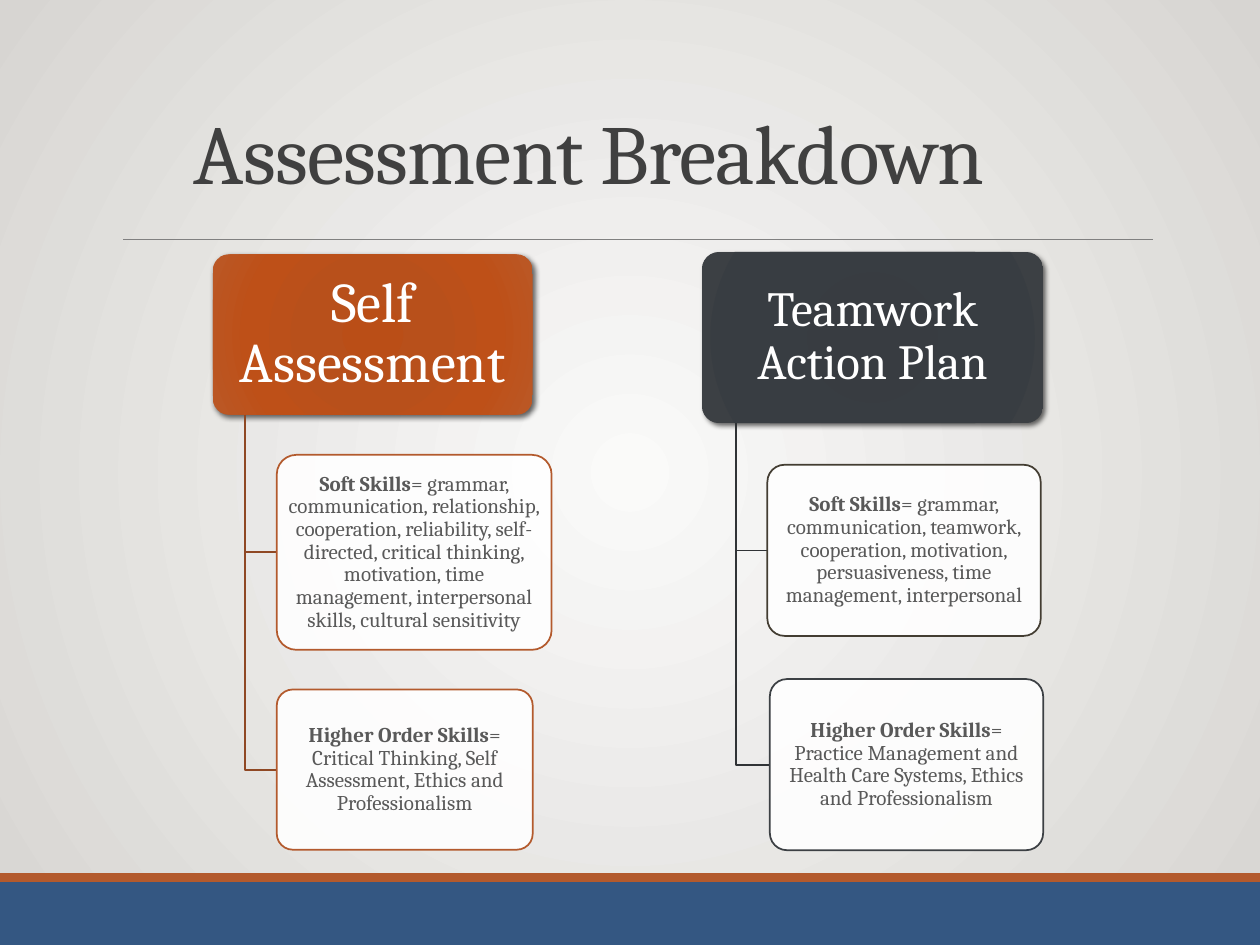
from lxml.etree import SubElement
from pptx import Presentation
from pptx.dml.color import RGBColor
from pptx.enum.shapes import MSO_CONNECTOR, MSO_SHAPE
from pptx.enum.text import MSO_ANCHOR, PP_ALIGN
from pptx.oxml.ns import qn
from pptx.util import Cm, Pt

WHITE = RGBColor(0xFF, 0xFF, 0xFF)
TITLE_GRAY = RGBColor(0x40, 0x40, 0x40)
BODY_GRAY = RGBColor(0x59, 0x59, 0x59)
RULE_GRAY = RGBColor(0x80, 0x80, 0x80)
BLUE = RGBColor(0x34, 0x57, 0x82)
ORANGE = RGBColor(0xB3, 0x5A, 0x2D)
BROWN = RGBColor(0x8F, 0x48, 0x24)
CHARCOAL = RGBColor(0x30, 0x33, 0x36)
OLIVE = RGBColor(0x43, 0x3D, 0x32)
SLATE = RGBColor(0x3C, 0x40, 0x44)

FONT = "Cambria"
TITLE = "Assessment Breakdown"
BACKGROUND_STOPS = [(0, "FAFAF9"), (100, "D7D5D2")]
BANDS = [(17.78, 1.27, BLUE), (17.6, 0.18, ORANGE)]
BRANCHES = [
    {
        "heading": "Self Assessment", "size": 32, "box": (4.29, 5.13, 6.45, 3.23),
        "margins": (0.18, 0.1), "connector": BROWN,
        "stops": [(0, "BA4E17"), (34, "B8501B"), (70, "BE5018"), (100, "BA5826")],
        "skills": [
            ("Soft Skills", "= grammar, communication, relationship, cooperation, "
             "reliability, self-directed, critical thinking, motivation, time "
             "management, interpersonal skills, cultural sensitivity",
             (5.58, 9.17, 5.54, 3.93), ORANGE),
            ("Higher Order Skills", "= Critical Thinking, Self Assessment, Ethics "
             "and Professionalism", (5.58, 13.9, 5.16, 3.23), ORANGE),
        ],
    },
    {
        "heading": "Teamwork Action Plan", "size": 28, "box": (14.15, 5.08, 6.88, 3.45),
        "margins": (0.15, 0.1), "connector": CHARCOAL,
        "stops": [(0, "373C40"), (34, "383C41"), (70, "383D42"), (100, "3C4044")],
        "skills": [
            ("Soft Skills", "= grammar, communication, teamwork, cooperation, "
             "motivation, persuasiveness, time management, interpersonal",
             (15.47, 9.37, 5.51, 3.45), OLIVE),
            ("Higher Order Skills", "= Practice Management and Health Care Systems, "
             "Ethics and Professionalism", (15.52, 13.69, 5.51, 3.45), SLATE),
        ],
    },
]


def set_gradient(properties, stops, focus):
    solid = properties.find(qn("a:solidFill"))
    gradient = solid.makeelement(qn("a:gradFill"), {"rotWithShape": "1"})
    stop_list = SubElement(gradient, qn("a:gsLst"))
    for position, color in stops:
        stop = SubElement(stop_list, qn("a:gs"), pos=str(position * 1000))
        SubElement(stop, qn("a:srgbClr"), val=color)
    path = SubElement(gradient, qn("a:path"), {"path": "circle"})
    SubElement(path, qn("a:fillToRect"), {side: str(focus * 1000) for side in "ltrb"})
    properties.replace(solid, gradient)


def add_shadow(shape):
    effects = shape.element.spPr.find(qn("a:effectLst"))
    shadow = SubElement(effects, qn("a:outerShdw"), blurRad=str(Pt(3)),
                        dist=str(Pt(2)), dir="2700000", rotWithShape="0")
    color = SubElement(shadow, qn("a:srgbClr"), val="000000")
    SubElement(color, qn("a:alpha"), val="60000")


def add_block(slide, kind, box, fill, line=None):
    shape = slide.shapes.add_shape(kind, *map(Cm, box))
    shape.shadow.inherit = False
    shape.fill.solid()
    shape.fill.fore_color.rgb = fill
    if line is None:
        shape.line.fill.background()
    else:
        shape.line.color.rgb = line
        shape.line.width = Pt(1)
    return shape


def write_text(shape, runs, size, color, margins, anchor=MSO_ANCHOR.MIDDLE,
               alignment=PP_ALIGN.CENTER, line_spacing=0.9):
    frame = shape.text_frame
    horizontal, vertical = map(Cm, margins)
    frame_format = {
        "word_wrap": True, "vertical_anchor": anchor,
        "margin_left": horizontal, "margin_right": horizontal,
        "margin_top": vertical, "margin_bottom": vertical,
    }
    for name, value in frame_format.items():
        setattr(frame, name, value)
    paragraph = frame.paragraphs[0]
    paragraph.alignment = alignment
    paragraph.line_spacing = line_spacing
    for text, bold in runs:
        run = paragraph.add_run()
        run.text = text
        for name, value in {"name": FONT, "size": Pt(size), "bold": bold}.items():
            setattr(run.font, name, value)
        run.font.color.rgb = color
    return paragraph


def add_elbow(slide, heading_box, skill_box, color):
    left, top, width, height = heading_box
    trunk = Cm(left + width / 10)
    middle = Cm(skill_box[1] + skill_box[3] / 2)
    builder = slide.shapes.build_freeform(trunk, Cm(top + height))
    builder.add_line_segments([(trunk, middle), (Cm(skill_box[0]), middle)], close=False)
    elbow = builder.convert_to_shape()
    elbow.shadow.inherit = False
    elbow.fill.background()
    elbow.line.color.rgb = color
    elbow.line.width = Pt(1)


def add_branch(slide, branch):
    heading = add_block(slide, MSO_SHAPE.ROUNDED_RECTANGLE, branch["box"], WHITE)
    heading.adjustments[0] = 0.1
    set_gradient(heading.element.spPr, branch["stops"], 100)
    add_shadow(heading)
    write_text(heading, [(branch["heading"], False)], branch["size"], WHITE,
               branch["margins"])
    for name, details, box, outline in branch["skills"]:
        add_elbow(slide, branch["box"], box, branch["connector"])
        card = add_block(slide, MSO_SHAPE.ROUNDED_RECTANGLE, box, WHITE, outline)
        card.adjustments[0] = 0.1
        color = card.element.spPr.find(qn("a:solidFill"))[0]
        SubElement(color, qn("a:alpha"), val="90000")
        write_text(card, [(name, True), (details, False)], 12, BODY_GRAY, (0.08, 0.05))


def main():
    presentation = Presentation()
    presentation.slide_width = Cm(25.4)
    presentation.slide_height = Cm(19.05)
    slide = presentation.slides.add_slide(presentation.slide_layouts[6])
    slide.background.fill.solid()
    slide.background.fill.fore_color.rgb = WHITE
    set_gradient(next(slide.element.iter(qn("p:bgPr"))), BACKGROUND_STOPS, 50)

    for top, height, color in BANDS:
        add_block(slide, MSO_SHAPE.RECTANGLE, (0, top, 25.4, height), color)
    rule = slide.shapes.add_connector(MSO_CONNECTOR.STRAIGHT, Cm(2.48), Cm(4.83),
                                      Cm(23.24), Cm(4.83))
    rule.line.color.rgb = RULE_GRAY
    rule.line.width = Pt(0.5)
    SubElement(rule.element.spPr, qn("a:effectLst"))

    title = slide.shapes.add_textbox(Cm(3.66), Cm(0.15), Cm(20.96), Cm(4.04))
    paragraph = write_text(title, [(TITLE, False)], 48, TITLE_GRAY, (0.25, 0.13),
                           MSO_ANCHOR.BOTTOM, PP_ALIGN.LEFT, 0.85)
    paragraph.runs[0].font._element.set("spc", "-50")

    for branch in BRANCHES:
        add_branch(slide, branch)
    presentation.save("out.pptx")


if __name__ == "__main__":
    main()
